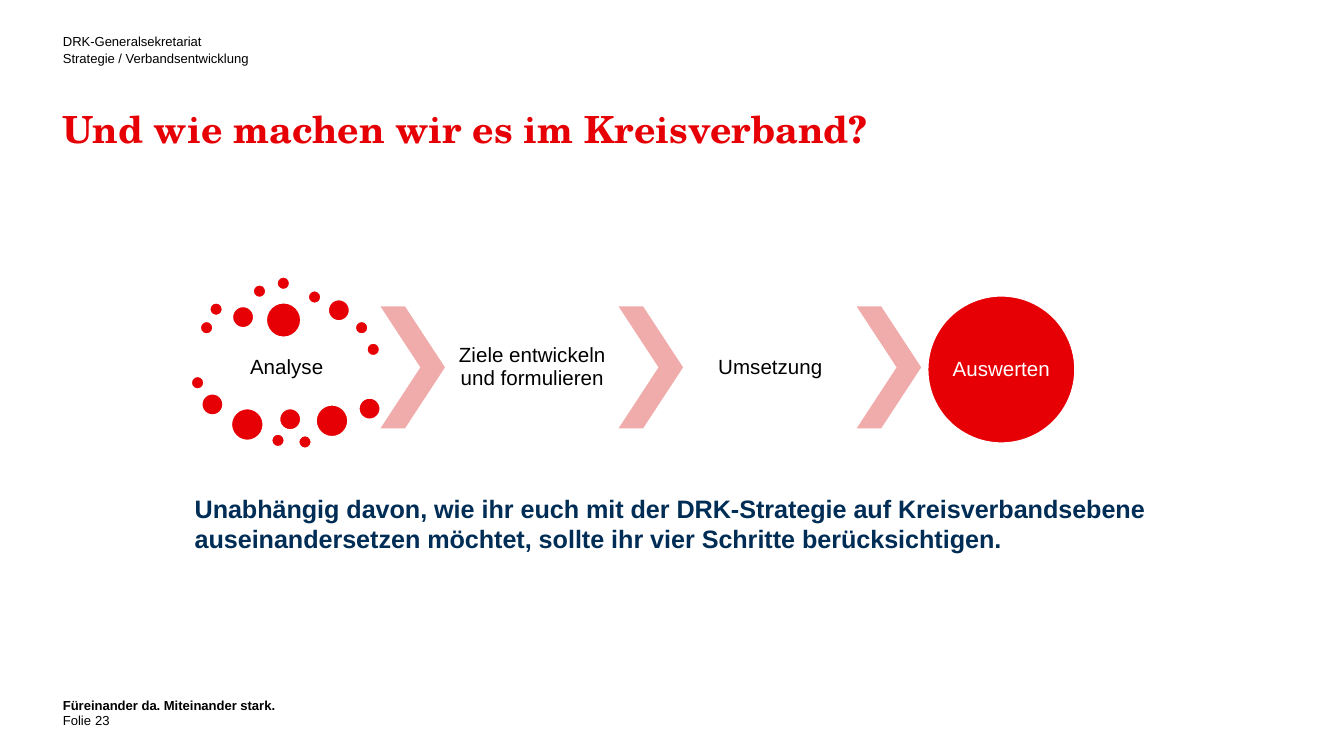
from pptx import Presentation
from pptx import util as u
from pptx.dml.color import RGBColor
from pptx.enum import shapes, text

HUES = {"red": "E60005", "pink": "F0ABAB", "navy": "002D55", "black": "000000", "white": "FFFFFF"}
SMALL = dict(size=u.Pt(7), lead=u.Pt(9))
STEP = dict(size=u.Pt(11), lead=0.9, align=text.PP_ALIGN.CENTER, anchor=text.MSO_ANCHOR.MIDDLE)
DOTS = {
    0.25: [(3.78, 6.07), (3.96, 5.72), (4.78, 5.38), (5.23, 5.23), (5.82, 5.49),
           (6.71, 6.07), (6.93, 6.48), (3.61, 7.11), (5.13, 8.2), (5.64, 8.23)],
    0.41: [(4.39, 5.79), (6.2, 5.66), (3.81, 7.44), (5.28, 7.72), (6.78, 7.52)],
    0.61: [(4.37, 7.72), (5.97, 7.65)],
    0.66: [(5.03, 5.72)],
}


class Deck:
    """Holds the style and the current slide, and draws each kind of element."""

    def __init__(self, wide, high):
        self.prs = Presentation()
        self.prs.slide_width, self.prs.slide_height = u.Cm(wide), u.Cm(high)
        self.slide = self.prs.slides.add_slide(self.prs.slide_layouts[6])

    def hue(self, name):
        return RGBColor.from_string(HUES[name])

    def letter(self, shape, words, size, lead=None, hue="black", face="Arial", bold=False,
               align=text.PP_ALIGN.LEFT, anchor=text.MSO_ANCHOR.TOP, pad=(0, 0)):
        frame = shape.text_frame
        side, top = map(u.Cm, pad)
        look = dict(word_wrap=True, vertical_anchor=anchor, margin_left=side,
                    margin_right=side, margin_top=top, margin_bottom=top)
        for key, val in look.items():
            setattr(frame, key, val)
        frame.text = words
        for para in frame.paragraphs:
            para.alignment, para.line_spacing = align, lead
            for key, val in dict(size=size, name=face, bold=bold).items():
                setattr(para.font, key, val)
            para.font.color.rgb = self.hue(hue)

    def label(self, box, words, **style):
        self.letter(self.slide.shapes.add_textbox(*map(u.Cm, box)), words, **style)

    def shape(self, kind, box, fill, line=None):
        item = self.slide.shapes.add_shape(kind, *map(u.Cm, box))
        item.shadow.inherit = False
        item.fill.solid()
        item.fill.fore_color.rgb = self.hue(fill)
        if line:
            item.line.color.rgb = self.hue(line)
            item.line.width = u.Pt(1)
        else:
            item.line.fill.background()
        return item

    def disc(self, left, top, size):
        return self.shape(shapes.MSO_SHAPE.OVAL, (left, top, size, size), "red", "white")

    def arrow(self, box):
        self.shape(shapes.MSO_SHAPE.CHEVRON, box, "pink").adjustments[0] = 0.62


def main():
    deck = Deck(25.4, 14.29)
    low = text.MSO_ANCHOR.BOTTOM
    deck.label((1.19, 0.61, 4.55, 0.94),
               "DRK-Generalsekretariat\nStrategie / Verbandsentwicklung", **SMALL)
    deck.label((1.19, 2.01, 23.01, 1.63), "Und wie machen wir es im Kreisverband?",
               size=u.Pt(20), lead=u.Pt(24), hue="red", face="TeX Gyre Schola", bold=True)

    deck.label((3.78, 6.4, 3.28, 1.09), "Analyse", pad=(0.05, 0.05), **STEP)
    for size, spots in DOTS.items():
        for left, top in spots:
            deck.disc(left, top, size)

    start, pitch, top, wide, high = 7.19, 4.5, 5.79, 1.22, 2.31
    for num, words in enumerate(["Ziele entwickeln und formulieren", "Umsetzung", None]):
        left = start + num * pitch
        deck.arrow((left, top, wide, high))
        if words:
            deck.label((left + wide, top, 3.3, high), words, pad=(0.05, 0.05), **STEP)
    deck.letter(deck.disc(17.53, 5.59, 2.79), "Auswerten", hue="white", **STEP)

    deck.label((3.43, 9.19, 19.69, 1.42),
               "Unabhängig davon, wie ihr euch mit der DRK-Strategie auf Kreisverbandsebene "
               "auseinandersetzen möchtet, sollte ihr vier Schritte berücksichtigen.",
               size=u.Pt(13.5), hue="navy", bold=True, pad=(0.25, 0.13))

    deck.label((1.19, 13.16, 23.01, 0.23), "Füreinander da. Miteinander stark.", bold=True, **SMALL)
    deck.label((1.19, 13.44, 0.76, 0.33), "Folie", anchor=low, **SMALL)
    deck.label((1.8, 13.46, 5.72, 0.31), "23", anchor=low, **SMALL)
    deck.prs.save("out.pptx")


if __name__ == "__main__":
    main()
